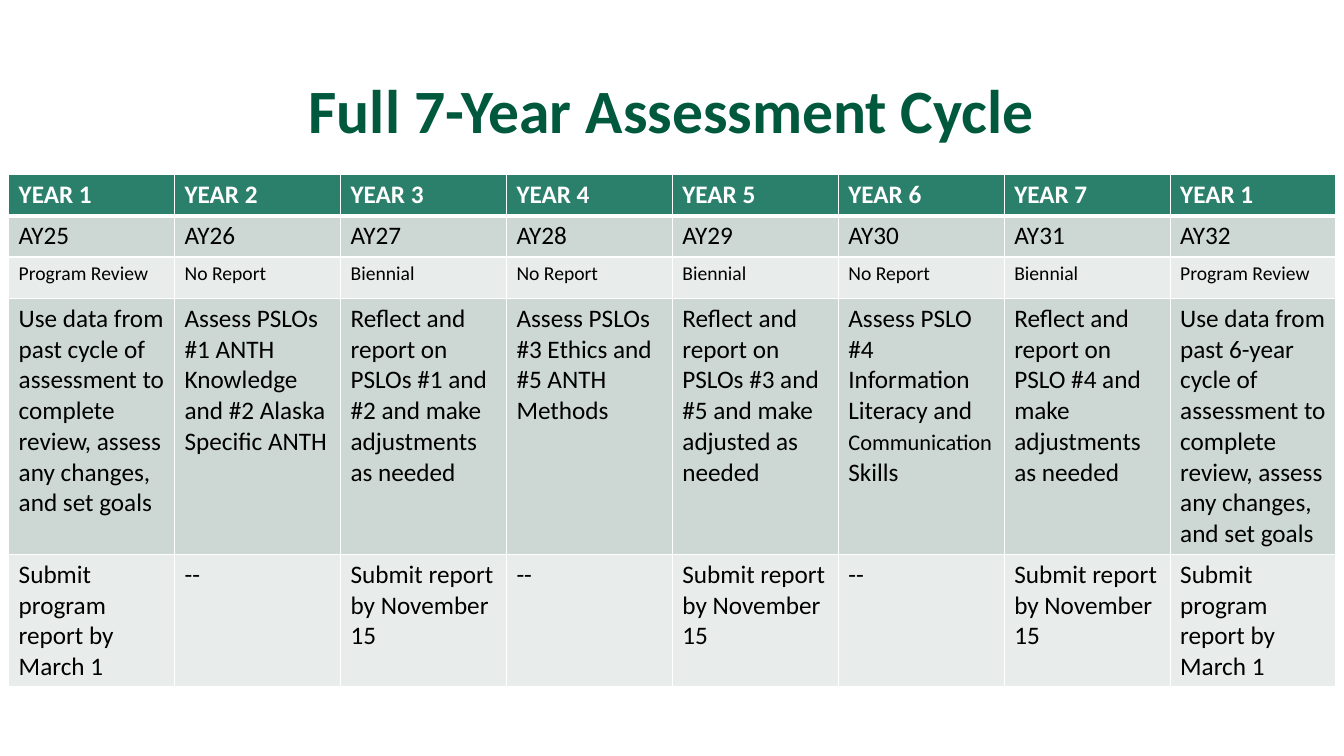
from lxml.etree import SubElement
from pptx import Presentation
from pptx.dml.color import RGBColor
from pptx.enum.text import MSO_ANCHOR as Anchor, PP_ALIGN as Align
from pptx.oxml.ns import qn
from pptx.util import Inches, Pt

# Content: one tuple per table row
TITLE = "Full 7-Year Assessment Cycle"
REVIEW_REPORT = "Submit program report by March 1"
BIENNIAL_REPORT = "Submit report by November 15"
ROWS = [
    ("YEAR 1", "YEAR 2", "YEAR 3", "YEAR 4", "YEAR 5", "YEAR 6", "YEAR 7", "YEAR 1"),
    ("AY25", "AY26", "AY27", "AY28", "AY29", "AY30", "AY31", "AY32"),
    ("Program Review", "No Report", "Biennial", "No Report",
     "Biennial", "No Report", "Biennial", "Program Review"),
    ("Use data from past cycle of assessment to complete review, "
     "assess any changes, and set goals",
     "Assess PSLOs #1 ANTH Knowledge and #2 Alaska Specific ANTH",
     "Reflect and report on PSLOs #1 and #2 and make adjustments as needed",
     "Assess PSLOs #3 Ethics and #5 ANTH Methods",
     "Reflect and report on PSLOs #3 and #5 and make adjusted as needed",
     [("Assess PSLO #4 Information Literacy and ", 18),
      ("Communication", 16), (" Skills", 18)],
     "Reflect and report on PSLO #4 and make adjustments as needed",
     "Use data from past 6-year cycle of assessment to complete review, "
     "assess any changes, and set goals"),
    (REVIEW_REPORT, "--", BIENNIAL_REPORT, "--",
     BIENNIAL_REPORT, "--", BIENNIAL_REPORT, REVIEW_REPORT),
]
ROW_HEIGHTS = (0.41, 0.41, 0.41, 2.54, 1.31)
ROW_SIZES = (18, 18, 14, 18, 18)

# Look
FONT = "Calibri"
DARK_GREEN = RGBColor(0x00, 0x58, 0x3D)
HEADER_GREEN = RGBColor(0x2B, 0x80, 0x6C)
BANDS = (RGBColor(0xE8, 0xED, 0xEB), RGBColor(0xCD, 0xD8, 0xD4))
WHITE = RGBColor(0xFF, 0xFF, 0xFF)
BLACK = RGBColor(0x00, 0x00, 0x00)

# Layout in inches
WIDTH, HEIGHT = 13.33, 7.5
TITLE_TOP, TITLE_HEIGHT = 0.06 * HEIGHT, HEIGHT / 6
TABLE_TOP = 1.73
COLUMN_WIDTH = 1.646
TABLE_WIDTH = COLUMN_WIDTH * len(ROWS[0])


def write(frame, text, size=18, color=BLACK, bold=False, align=Align.LEFT):
    """Fill a text frame with a string or a list of (string, size) spans."""
    para = frame.paragraphs[0]
    para.alignment = align
    spans = [(text, size)] if isinstance(text, str) else text
    for words, points in spans:
        span = para.add_run()
        span.text = words
        span.font.name = FONT
        span.font.size = Pt(points)
        span.font.bold = bold
        span.font.color.rgb = color


def add_borders(cell, **widths):
    properties = cell._tc.get_or_add_tcPr()
    for side in "LRTB":
        line = SubElement(properties, qn(f"a:ln{side}"), w=str(Pt(widths.get(side, 1))))
        fill = SubElement(line, qn("a:solidFill"))
        SubElement(fill, qn("a:srgbClr"), val=str(WHITE))


deck = Presentation()
deck.slide_width, deck.slide_height = Inches(WIDTH), Inches(HEIGHT)
page = deck.slides.add_slide(deck.slide_layouts[6])

# Title
box = page.shapes.add_textbox(Inches(0.05 * WIDTH), Inches(TITLE_TOP),
                              Inches(0.9 * WIDTH), Inches(TITLE_HEIGHT))
box.text_frame.word_wrap = True
box.text_frame.vertical_anchor = Anchor.MIDDLE
write(box.text_frame, TITLE, size=44, color=DARK_GREEN, bold=True, align=Align.CENTER)

# Assessment table
table = page.shapes.add_table(
    len(ROWS), len(ROWS[0]), Inches((WIDTH - TABLE_WIDTH) / 2 + 0.005), Inches(TABLE_TOP),
    Inches(TABLE_WIDTH), Inches(sum(ROW_HEIGHTS))).table
for column in table.columns:
    column.width = Inches(COLUMN_WIDTH)

for index, texts in enumerate(ROWS):
    header = index == 0
    table.rows[index].height = Inches(ROW_HEIGHTS[index])
    for cell, text in zip(table.rows[index].cells, texts):
        add_borders(cell, B=3 if header else 1, T=3 if index == 1 else 1)
        cell.fill.solid()
        cell.fill.fore_color.rgb = HEADER_GREEN if header else BANDS[index % 2]
        write(cell.text_frame, text, size=ROW_SIZES[index],
              color=WHITE if header else BLACK, bold=header)

deck.save("out.pptx")
